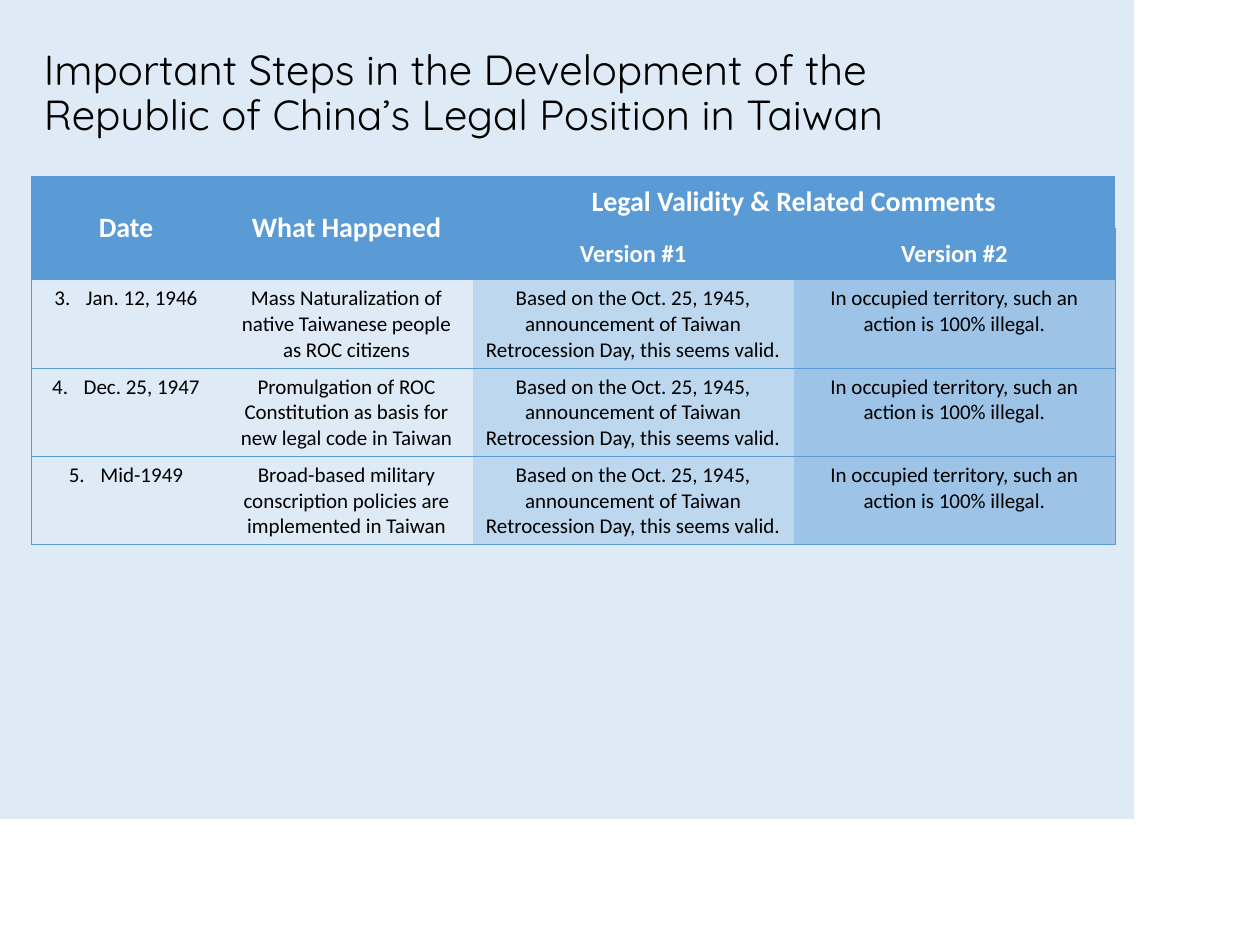
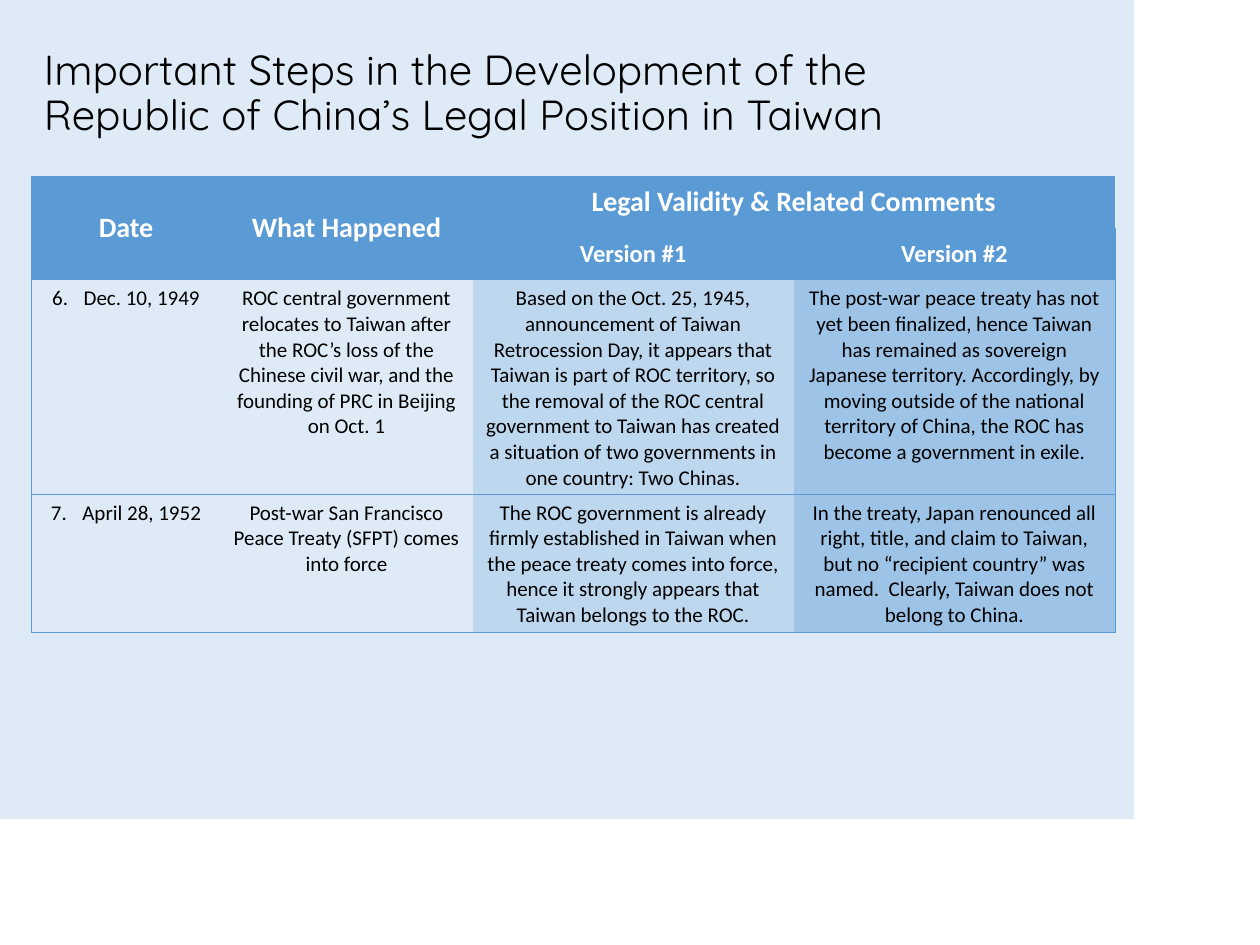
from lxml.etree import SubElement
from pptx import Presentation
from pptx.dml.color import RGBColor
from pptx.enum.shapes import MSO_SHAPE
from pptx.enum.text import MSO_ANCHOR, PP_ALIGN
from pptx.oxml.ns import qn
from pptx.util import Inches, Pt

# Shared look
BLACK = RGBColor(0x00, 0x00, 0x00)
WHITE = RGBColor(0xFF, 0xFF, 0xFF)
PALE = RGBColor(0xDE, 0xEB, 0xF7)
HEADER_BLUE = RGBColor(0x5B, 0x9B, 0xD5)
VERSION_1_BLUE = RGBColor(0xBD, 0xD7, 0xEE)
VERSION_2_BLUE = RGBColor(0x9D, 0xC3, 0xE6)
COLUMN_FILLS = [None, None, VERSION_1_BLUE, VERSION_2_BLUE]
TITLE_FONT, TABLE_FONT = "Quicksand", "Calibri"
PLAIN_TABLE_STYLE = "{2D5ABB26-0587-4C30-8999-92F81FD0307C}"

# Layout
SLIDE_WIDTH, SLIDE_HEIGHT = Inches(10), Inches(7.5)
PANEL_WIDTH, PANEL_HEIGHT = Inches(9), Inches(6.5)
MARGIN = Inches(0.25)
TABLE_TOP = Inches(1.4)
COLUMN_WIDTHS = [Inches(width) for width in (1.5, 2, 2.55, 2.55)]
ROW_HEIGHT = Inches(0.41)
HEADER_ROWS = 2

# Content
TITLE = ("Important Steps in the Development of the\v"
         "Republic of China’s Legal Position in Taiwan")
SEEMS_VALID = ("Based on the Oct. 25, 1945, announcement of Taiwan "
               "Retrocession Day, this seems valid.")
ILLEGAL = "In occupied territory, such an action is 100% illegal."
STEPS_1946_TO_1949 = [
    ("Jan. 12, 1946",
     "Mass Naturalization of native Taiwanese people as ROC citizens",
     SEEMS_VALID, ILLEGAL),
    ("Dec. 25, 1947",
     "Promulgation of ROC Constitution as basis for new legal code in Taiwan",
     SEEMS_VALID, ILLEGAL),
    ("Mid-1949",
     "Broad-based military conscription policies are implemented in Taiwan",
     SEEMS_VALID, ILLEGAL),
]
STEPS_1949_TO_1952 = [
    ("Dec. 10, 1949",
     "ROC central government relocates to Taiwan after the ROC’s loss of the "
     "Chinese civil war, and the founding of PRC in Beijing on Oct. 1",
     "Based on the Oct. 25, 1945, announcement of Taiwan Retrocession Day, it "
     "appears that Taiwan is part of ROC territory, so the removal of the ROC "
     "central government to Taiwan has created a situation of two governments "
     "in one country: Two Chinas.",
     "The post-war peace treaty has not yet been finalized, hence Taiwan has "
     "remained as sovereign Japanese territory. Accordingly, by moving outside "
     "of the national territory of China, the ROC has become a government in "
     "exile."),
    ("April 28, 1952",
     "Post-war San Francisco Peace Treaty (SFPT) comes into force",
     "The ROC government is already firmly established in Taiwan when the "
     "peace treaty comes into force, hence it strongly appears that Taiwan "
     "belongs to the ROC.",
     "In the treaty, Japan renounced all right, title, and claim to Taiwan, "
     "but no “recipient country” was named.  Clearly, Taiwan does not belong "
     "to China."),
]


def set_font(paragraph, name, size, color, bold=False):
    font = paragraph.font
    font.name, font.size, font.bold = name, Pt(size), bold
    font.color.rgb = color


def add_panel(slide):
    panel = slide.shapes.add_shape(MSO_SHAPE.RECTANGLE, 0, 0,
                                   PANEL_WIDTH, PANEL_HEIGHT)
    panel.shadow.inherit = False
    panel.fill.solid()
    panel.fill.fore_color.rgb = PALE
    panel.line.fill.background()


def add_title(slide):
    title = slide.shapes.add_textbox(MARGIN, MARGIN,
                                     PANEL_WIDTH - 2 * MARGIN, Inches(1))
    frame = title.text_frame
    frame.word_wrap = True
    frame.vertical_anchor = MSO_ANCHOR.MIDDLE
    heading = frame.paragraphs[0]
    heading.text = TITLE
    heading.line_spacing = 0.9
    set_font(heading, TITLE_FONT, 24, BLACK)


def number_paragraph(paragraph, number):
    properties = paragraph._p.get_or_add_pPr()
    properties.set("marL", str(Inches(0.25)))
    properties.set("indent", str(-Inches(0.25)))
    SubElement(properties, qn("a:buAutoNum"),
               type="arabicPeriod", startAt=str(number))


def draw_border(cell, side):
    border = SubElement(cell._tc.get_or_add_tcPr(), qn(f"a:ln{side}"),
                        w=str(Pt(0.5)))
    fill = SubElement(border, qn("a:solidFill"))
    SubElement(fill, qn("a:srgbClr"), val=str(HEADER_BLUE))


def fill_cell(cell, color):
    if color is None:
        cell.fill.background()
    else:
        cell.fill.solid()
        cell.fill.fore_color.rgb = color


def write_cell(cell, text, size, color, bold=False, number=None):
    paragraph = cell.text_frame.paragraphs[0]
    paragraph.text = text
    paragraph.alignment = PP_ALIGN.CENTER
    if number is not None:
        number_paragraph(paragraph, number)
    set_font(paragraph, TABLE_FONT, size, color, bold)


def style_grid(table, row_count):
    """Outer frame, a rule under each step, and the column colours."""
    last_column = len(COLUMN_WIDTHS) - 1
    for row in range(row_count):
        for column, step_fill in enumerate(COLUMN_FILLS):
            cell = table.cell(row, column)
            sides = {"L": column == 0, "R": column == last_column,
                     "T": row == 0 or row > HEADER_ROWS,
                     "B": row >= HEADER_ROWS}
            for side, shown in sides.items():
                if shown:
                    draw_border(cell, side)
            fill_cell(cell, HEADER_BLUE if row < HEADER_ROWS else step_fill)


def write_header(table):
    headings = [(0, 0, 1, 0, "Date", 16),
                (0, 1, 1, 1, "What Happened", 16),
                (0, 2, 0, 3, "Legal Validity & Related Comments", 16),
                (1, 2, 1, 2, "Version #1", 14),
                (1, 3, 1, 3, "Version #2", 14)]
    for top, left, bottom, right, text, size in headings:
        cell = table.cell(top, left)
        if (top, left) != (bottom, right):
            cell.merge(table.cell(bottom, right))
        cell.vertical_anchor = MSO_ANCHOR.MIDDLE
        write_cell(cell, text, size, WHITE, bold=True)


def add_steps_table(slide, steps, first_number):
    row_count = HEADER_ROWS + len(steps)
    frame = slide.shapes.add_table(row_count, len(COLUMN_WIDTHS), MARGIN,
                                   TABLE_TOP, sum(COLUMN_WIDTHS),
                                   ROW_HEIGHT * row_count)
    table = frame.table
    table.first_row = table.horz_banding = False
    table._tbl.tblPr.find(qn("a:tableStyleId")).text = PLAIN_TABLE_STYLE
    for column, width in zip(table.columns, COLUMN_WIDTHS):
        column.width = width
    style_grid(table, row_count)
    write_header(table)
    for index, step in enumerate(steps):
        for column, text in enumerate(step):
            write_cell(table.cell(HEADER_ROWS + index, column), text, 12, BLACK,
                       number=first_number + index if column == 0 else None)


def main():
    deck = Presentation()
    deck.slide_width, deck.slide_height = SLIDE_WIDTH, SLIDE_HEIGHT
    for steps, first_number in ((STEPS_1946_TO_1949, 3),
                                (STEPS_1949_TO_1952, 6)):
        slide = deck.slides.add_slide(deck.slide_layouts[6])
        add_panel(slide)
        add_title(slide)
        add_steps_table(slide, steps, first_number)
    deck.save("out.pptx")


if __name__ == "__main__":
    main()
